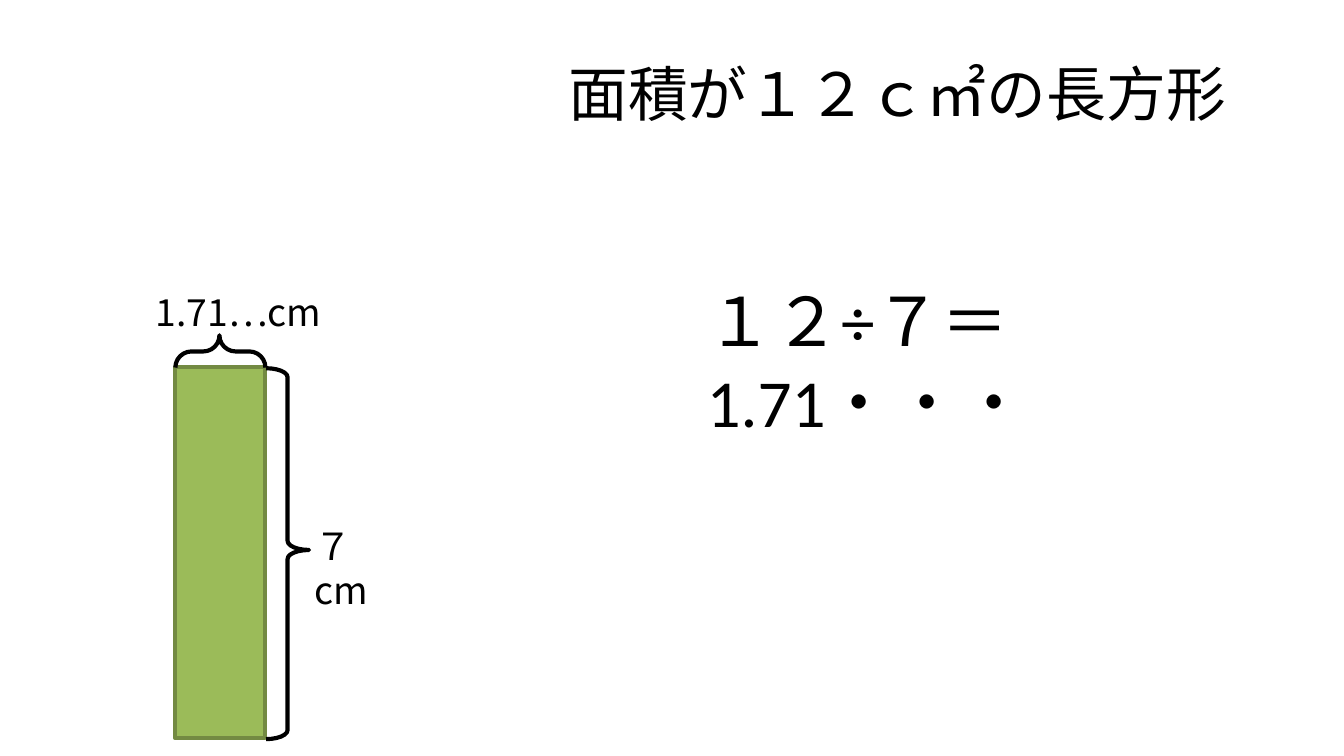
"""Build a slide on the side lengths of a rectangle with a fixed area."""
from lxml.etree import SubElement
from pptx import Presentation
from pptx.dml.color import RGBColor
from pptx.enum.shapes import MSO_SHAPE
from pptx.enum.text import MSO_ANCHOR, MSO_AUTO_SIZE, PP_ALIGN
from pptx.oxml.ns import qn
from pptx.util import Inches, Pt

JAPANESE_FONT = "Noto Sans CJK JP"


def color(value):
    """Turn a hex string into a colour."""
    return RGBColor.from_string(value)


def write(box, text, place, size, font=JAPANESE_FONT, fill="000000", right=0.1):
    """Place a text holder and write one formatted paragraph in it."""
    box.left, box.top, box.width, box.height = [Inches(value) for value in place]
    frame = box.text_frame
    frame.word_wrap = True
    frame.auto_size = MSO_AUTO_SIZE.NONE
    frame.vertical_anchor = MSO_ANCHOR.TOP
    frame.margin_right = Inches(right)
    para = frame.paragraphs[0]
    para.alignment = PP_ALIGN.LEFT
    span = para.add_run()
    span.text = text
    span.font.name = font
    span.font.size = Pt(size)
    span.font.color.rgb = color(fill)
    SubElement(span.font._element, qn("a:ea")).set("typeface", JAPANESE_FONT)


deck = Presentation()
deck.slide_width = Inches(10)
deck.slide_height = deck.slide_width * 9 // 16
page = deck.slides.add_slide(deck.slide_layouts[5])

rectangle = page.shapes.add_shape(
    MSO_SHAPE.RECTANGLE, Inches(1.3), Inches(2.73), Inches(0.67), Inches(2.76))
rectangle.shadow.inherit = False
rectangle.fill.solid()
rectangle.fill.fore_color.rgb = color("9BBB59")
rectangle.line.color.rgb = color("738A42")
rectangle.line.width = Pt(2)

write(page.shapes.title, "面積が１２ｃ㎡の長方形", (4.13, 0.37, 5.43, 0.64), 32)

labels = [
    ("1.71…cm", (1.06, 2.1, 2.05, 0.44), 20, JAPANESE_FONT, 0.1),
    ("７cm", (2.24, 3.84, 0.79, 0.44), 20, JAPANESE_FONT, 0.1),
    ("１２÷７＝1.71・・・", (5.16, 2.03, 4.41, 0.71), 36, "Calibri", 1.6),
]
for text, place, size, font, right in labels:
    write(page.shapes.add_textbox(0, 0, 0, 0), text, place, size,
          font=font, right=right)

braces = [
    ((1.98, 2.74, 0.32, 2.76), 0, 0.21),
    ((1.52, 2.28, 0.24, 0.67), 270, 0.5),
]
for place, rotation, curve in braces:
    brace = page.shapes.add_shape(
        MSO_SHAPE.RIGHT_BRACE, *[Inches(value) for value in place])
    brace.rotation = rotation
    brace.adjustments[0] = curve
    brace.adjustments[1] = 0.49
    brace.shadow.inherit = False
    brace.fill.background()
    brace.line.color.rgb = color("000000")
    brace.line.width = Pt(2.25)

deck.save("out.pptx")
